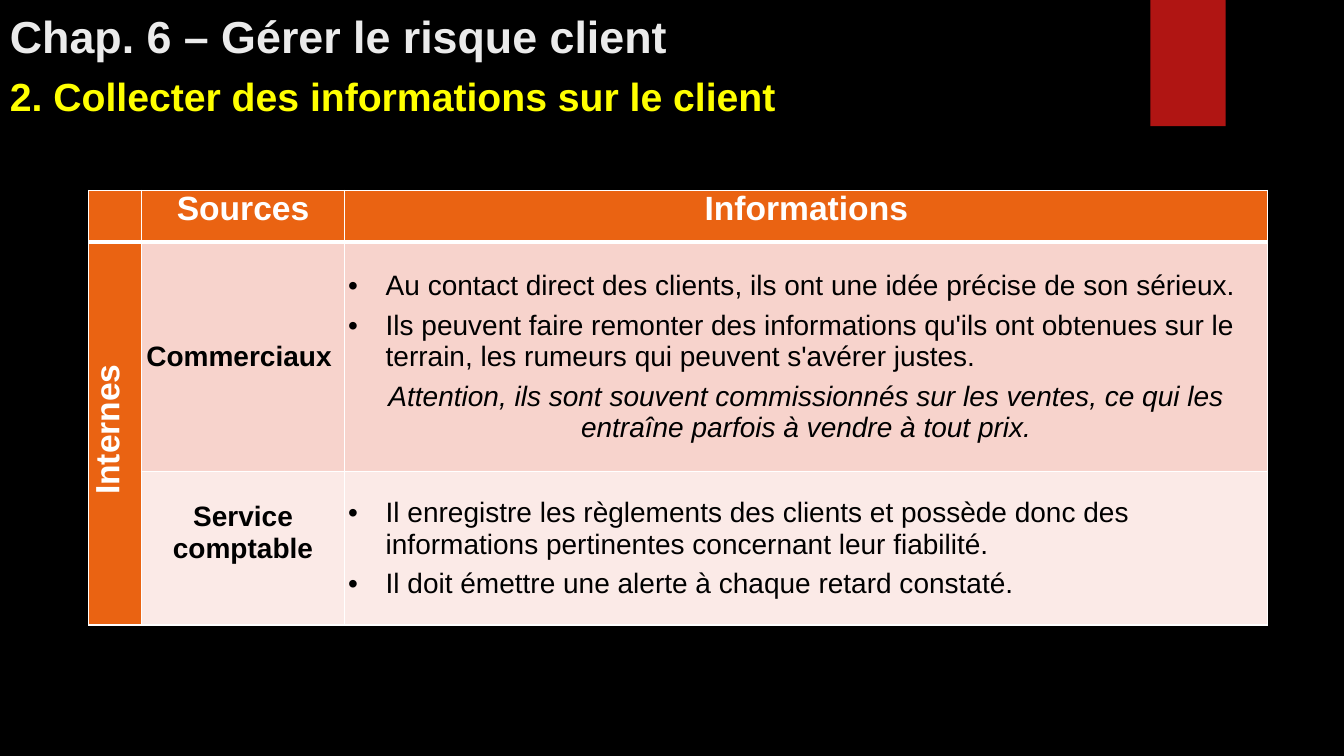
from lxml import etree
from pptx import Presentation
from pptx.dml.color import RGBColor
from pptx.enum.shapes import MSO_SHAPE
from pptx.enum.text import MSO_ANCHOR, PP_ALIGN
from pptx.oxml.ns import qn
from pptx.util import Cm, Pt

LEFT, CENTER, JUSTIFY = PP_ALIGN.LEFT, PP_ALIGN.CENTER, PP_ALIGN.JUSTIFY
TOP, MIDDLE, BOTTOM = MSO_ANCHOR.TOP, MSO_ANCHOR.MIDDLE, MSO_ANCHOR.BOTTOM
RECTANGLE = MSO_SHAPE.RECTANGLE

BLACK, WHITE, YELLOW = "000000", "FFFFFF", "FFFF00"
ORANGE, RED, TITLE_GREY = "EA6312", "B01513", "EBEBEB"
ROSE, PALE_ROSE = "F7D3CC", "FBEAE7"
COLUMN_WIDTHS = (1.32, 5.13, 23.26)
ROW_HEIGHTS = (1.3, 5.79, 3.86)


def paint(fill, color):
    fill.solid()
    fill.fore_color.rgb = RGBColor.from_string(color)


def write(frame, text, size=20, color=BLACK, bold=False, italic=False,
          align=LEFT, gap=0, bullet=False, indent=0):
    """Add one paragraph to a text frame; gap is the spacing in points."""
    first = not frame.text
    paragraph = frame.paragraphs[0] if first else frame.add_paragraph()
    paragraph.text = text
    paragraph.alignment = align
    paragraph.space_before = Pt(0 if first else gap)
    paragraph.space_after = Pt(gap)
    properties = paragraph._p.get_or_add_pPr()
    if bullet:
        indent = 0.95
        properties.set("indent", str(-Cm(indent)))
        etree.SubElement(properties, qn("a:buFont"), typeface="Arial")
        etree.SubElement(properties, qn("a:buChar"), char="•")
    properties.set("marL", str(Cm(indent)))
    font = paragraph.runs[0].font
    font.name = "Arial"
    font.size = Pt(size)
    font.bold = bold
    font.italic = italic
    font.color.rgb = RGBColor.from_string(color)


def add_heading(slide, text, top, width, height, anchor, **text_format):
    frame = slide.shapes.add_textbox(0, Cm(top), Cm(width), Cm(height)).text_frame
    frame.word_wrap = True
    frame.vertical_anchor = anchor
    write(frame, text, bold=True, **text_format)


def add_border(cell, side, points):
    line = etree.SubElement(cell._tc.get_or_add_tcPr(), qn("a:" + side),
                            w=str(Pt(points)))
    solid = etree.SubElement(line, qn("a:solidFill"))
    etree.SubElement(solid, qn("a:srgbClr"), val=WHITE)


def style_cell(cell, row, column):
    cell.margin_left = cell.margin_right = Cm(0.08)
    cell.margin_top = cell.margin_bottom = 0
    cell.vertical_anchor = TOP if row == 0 or column == 0 else MIDDLE
    for side in ("lnL", "lnR", "lnT", "lnB"):
        header_edge = (row, side) in ((0, "lnB"), (1, "lnT"))
        add_border(cell, side, 3 if header_edge else 1)
    body_color = ROSE if row == 1 else PALE_ROSE
    paint(cell.fill, ORANGE if row == 0 or column == 0 else body_color)


def add_sources_table(slide):
    table = slide.shapes.add_table(
        len(ROW_HEIGHTS), len(COLUMN_WIDTHS), Cm(2.24), Cm(4.8),
        Cm(sum(COLUMN_WIDTHS)), Cm(sum(ROW_HEIGHTS))).table
    for column, width in zip(table.columns, COLUMN_WIDTHS):
        column.width = Cm(width)
    for row, height in zip(table.rows, ROW_HEIGHTS):
        row.height = Cm(height)
    for row in range(len(ROW_HEIGHTS)):
        for column in range(len(COLUMN_WIDTHS)):
            style_cell(table.cell(row, column), row, column)

    # Header row
    for column, label in enumerate(("Sources", "Informations"), start=1):
        write(table.cell(0, column).text_frame, label, size=24, color=WHITE,
              bold=True, align=CENTER, gap=3)

    # Vertical label across both sources
    internal = table.cell(1, 0)
    internal.merge(table.cell(2, 0))
    internal._tc.get_or_add_tcPr().set("vert", "vert270")
    write(internal.text_frame, "Internes", size=24, color=WHITE, bold=True,
          align=CENTER, indent=0.2)

    # Source names, set slightly off centre
    sales, accounting = table.cell(1, 1), table.cell(2, 1)
    sales.margin_right = Cm(0.28)
    accounting.margin_bottom = Cm(0.79)
    write(sales.text_frame, "Commerciaux", bold=True, align=CENTER)
    write(accounting.text_frame, "Service comptable", bold=True, align=CENTER)

    # Information given by each source
    sales_info = table.cell(1, 2).text_frame
    write(sales_info, "Au contact direct des clients, ils ont une idée précise "
          "de son sérieux.", align=JUSTIFY, gap=3, bullet=True)
    write(sales_info, "Ils peuvent faire remonter des informations qu'ils ont "
          "obtenues sur le terrain, les rumeurs qui peuvent s'avérer justes.",
          gap=3, bullet=True)
    write(sales_info, "Attention, ils sont souvent commissionnés sur les ventes, "
          "ce qui les entraîne parfois à vendre à tout prix.",
          italic=True, align=CENTER, gap=3)
    accounting_info = table.cell(2, 2).text_frame
    write(accounting_info, "Il enregistre les règlements des clients et possède "
          "donc des informations pertinentes concernant leur fiabilité.",
          gap=3, bullet=True)
    write(accounting_info, "Il doit émettre une alerte à chaque retard constaté.",
          align=JUSTIFY, gap=3, bullet=True)


def main():
    presentation = Presentation()
    presentation.slide_width, presentation.slide_height = Cm(33.87), Cm(19.05)
    slide = presentation.slides.add_slide(presentation.slide_layouts[6])
    paint(slide.background.fill, BLACK)

    # Red ribbon
    ribbon = slide.shapes.add_shape(RECTANGLE, Cm(28.99), 0, Cm(1.9), Cm(3.18))
    ribbon.shadow.inherit = False
    paint(ribbon.fill, RED)
    ribbon.line.fill.background()

    # Chapter and section headings
    add_heading(slide, "Chap. 6 – Gérer le risque client", 0, 28.8, 1.7, BOTTOM,
                size=32, color=TITLE_GREY)
    add_heading(slide, "2. Collecter des informations sur le client", 1.7, 23.06,
                1.45, TOP, size=28, color=YELLOW)

    add_sources_table(slide)
    presentation.save("out.pptx")


if __name__ == "__main__":
    main()
